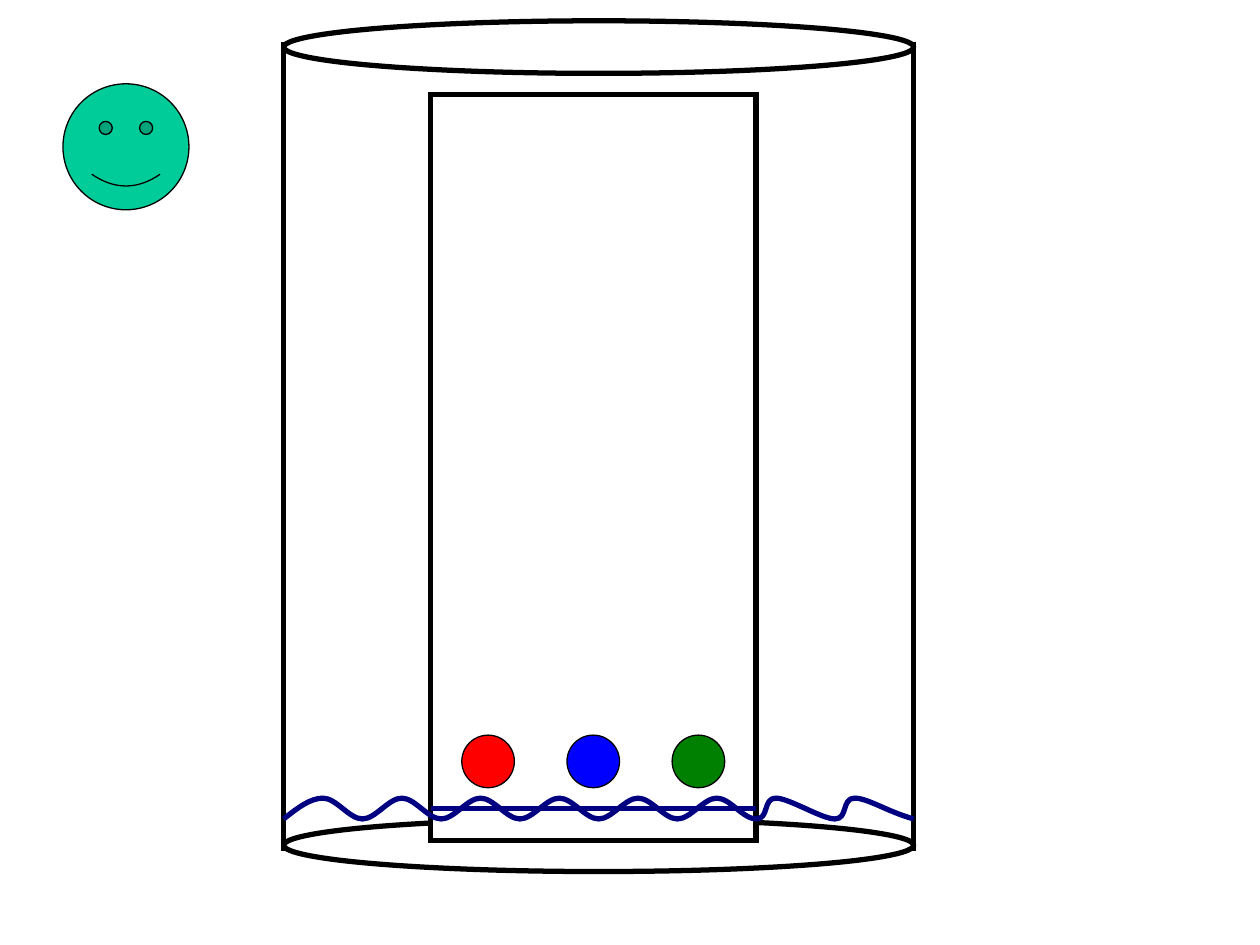
from pptx import Presentation
from pptx.dml.color import RGBColor
from pptx.enum.shapes import MSO_CONNECTOR as CONN, MSO_SHAPE as SHAPE
from pptx.oxml.ns import qn
from pptx.util import Cm, Pt

BLACK, WHITE, NAVY = "000000", "FFFFFF", "000080"
THICK, THIN = 3, 0.75


def rgb(color):
    return RGBColor.from_string(color)


def add_xml(parent, tag, **attrs):
    child = parent.makeelement(qn(tag), attrs)
    parent.append(child)
    return child


def style(sp, fill=None, line=BLACK, width=THICK):
    sp.shadow.inherit = False
    if fill:
        sp.fill.solid()
        sp.fill.fore_color.rgb = rgb(fill)
    else:
        sp.fill.background()
    sp.line.color.rgb = rgb(line)
    sp.line.width = Pt(width)


def add_shape(shapes, kind, box, **fmt):
    sp = shapes.add_shape(kind, *map(Cm, box))
    style(sp, **fmt)
    return sp


def add_line(shapes, x1, y1, x2, y2, color=BLACK):
    ln = shapes.add_connector(CONN.STRAIGHT, *map(Cm, (x1, y1, x2, y2)))
    ln.line.color.rgb = rgb(color)
    ln.line.width = Pt(THICK)
    add_xml(ln._element.spPr, "a:effectLst")


def add_cylinder(shapes, x, y, w, h):
    """Open cylinder: bottom rim, two sides, top rim."""
    rim = 1.06
    group = shapes.add_group_shape().shapes
    add_shape(group, SHAPE.OVAL, (x, y + h - rim, w, rim))
    for side in (x, x + w):
        add_line(group, side, y + 0.42, side, y + h - 0.42)
    add_shape(group, SHAPE.OVAL, (x, y, w, rim))


def add_strip(shapes, x, y, w, h):
    """Paper strip with three coloured spots near its foot."""
    sheet = add_shape(shapes, SHAPE.RECTANGLE, (x, y, w, h), fill=WHITE)
    add_xml(sheet.line._get_or_add_ln(), "a:miter", lim="800000")
    size = 1.06
    for i, color in enumerate(("FF0000", "0000FF", "008000")):
        box = (x + 0.63 + 2 * size * i, y + h - 2.12, size, size)
        add_shape(shapes, SHAPE.OVAL, box, fill=color, width=THIN)


def add_wave(shapes, x, y, w, h):
    """Liquid surface: knots alternate trough and crest, in sixteenths of w."""
    knots = [*range(13), 12.5, 14, 14.5, 16]
    last = len(knots) - 1
    points = [(k, 0 if i % 2 else 1) for i, k in enumerate(knots)]
    outline = [points[0]]
    for i, (p, q) in enumerate(zip(points, points[1:])):
        # Handles lie flat, except at the two ends of the wave
        out = (p[0] + 1 / 3, 0.5 if i == 0 else p[1])
        into = (q[0] - 2 / 3, 0.65) if i + 1 == last else (q[0] - 1 / 3, q[1])
        outline += [out, into, q]
    emu = [(Cm(x + w * k / 16), Cm(y + h * v)) for k, v in outline]
    builder = shapes.build_freeform(*emu[0])
    builder.add_line_segments(emu[1:], close=False)
    sp = builder.convert_to_shape()
    style(sp, line=NAVY)

    # Turn each three points (two handles and a knot) into one curve
    contour = next(sp._element.iter(qn("a:path")))
    segments = contour.findall(qn("a:lnTo"))
    for i in range(0, len(segments), 3):
        curve = add_xml(contour, "a:cubicBezTo")
        for segment in segments[i:i + 3]:
            curve.append(segment[0])
            contour.remove(segment)


def main():
    prs = Presentation()
    prs.slide_width, prs.slide_height = Cm(25.4), Cm(19.05)
    shapes = prs.slides.add_slide(prs.slide_layouts[6]).shapes

    # Vessel with the strip standing in it
    add_cylinder(shapes, 5.72, 0.42, 12.7, 17.15)
    add_strip(shapes, 8.68, 1.91, 6.56, 15.03)

    # Liquid and the start line on the strip
    add_wave(shapes, 5.72, 16.09, 12.7, 0.42)
    add_line(shapes, 8.68, 16.3, 15.24, 16.3, NAVY)

    # Smiley
    add_shape(shapes, SHAPE.SMILEY_FACE, (1.27, 1.69, 2.54, 2.54),
              fill="00CC99", width=THIN)

    prs.save("out.pptx")


if __name__ == "__main__":
    main()
